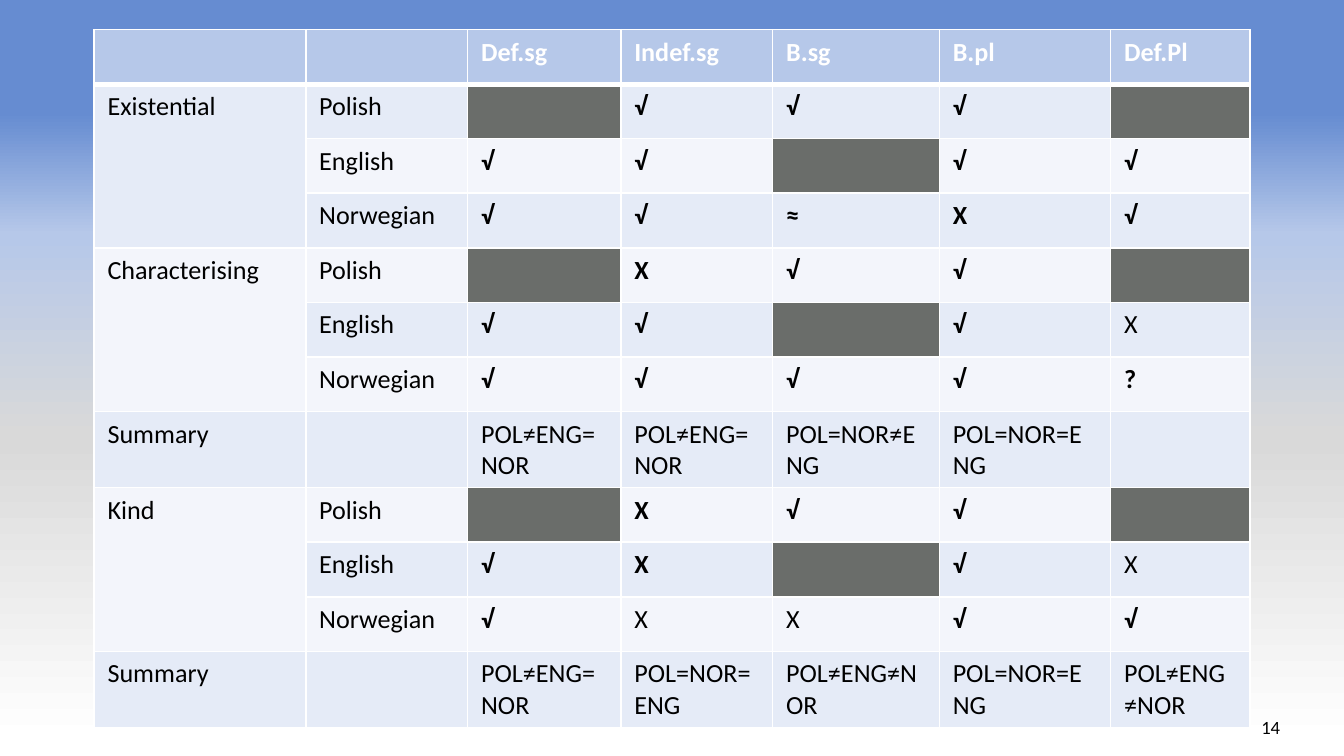
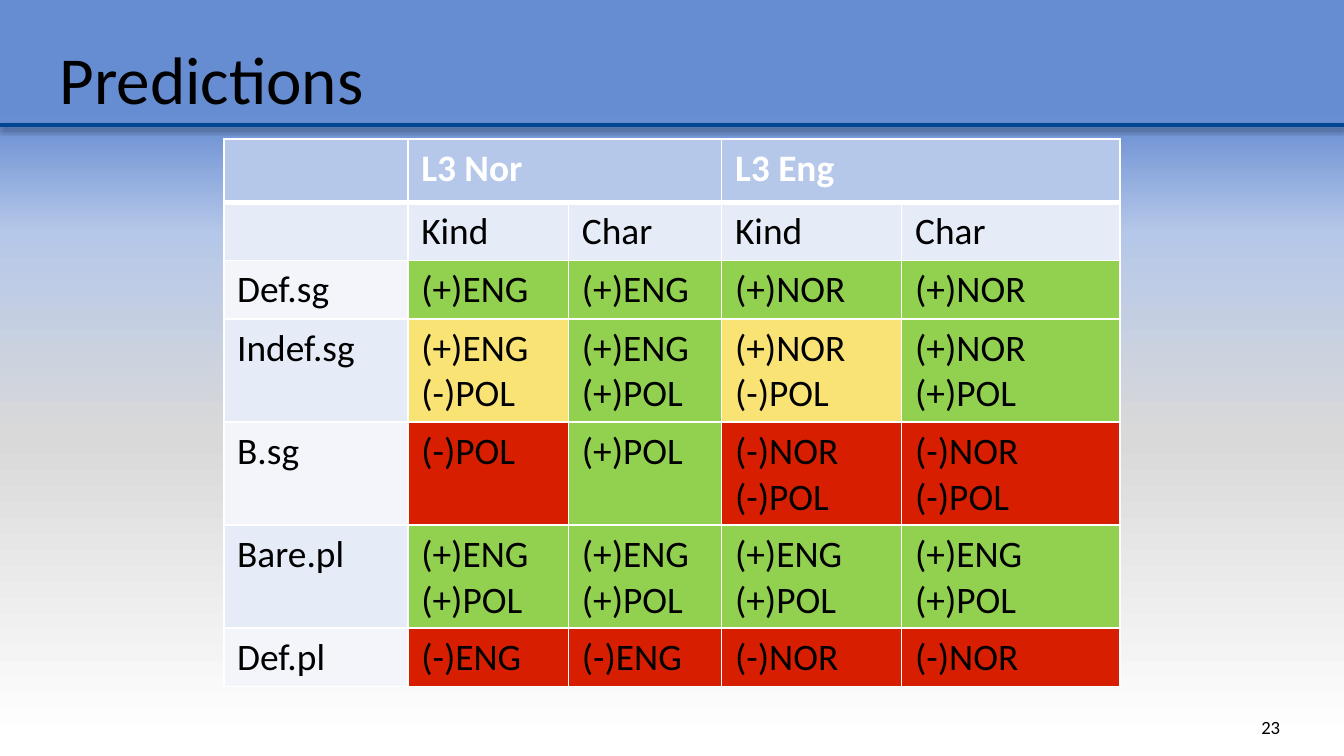
from copy import deepcopy

from lxml import etree
from pptx import Presentation
from pptx.dml.color import RGBColor
from pptx.enum.shapes import MSO_CONNECTOR
from pptx.enum.text import MSO_ANCHOR, PP_ALIGN
from pptx.oxml.ns import qn
from pptx.util import Inches, Pt

STRAIGHT = MSO_CONNECTOR.STRAIGHT
MIDDLE = MSO_ANCHOR.MIDDLE
LEFT, CENTER = PP_ALIGN.LEFT, PP_ALIGN.CENTER

COLORS = {
    "text": "000000", "white": "FFFFFF", "rule": "014693", "header": "B6C8E9",
    "band_odd": "E5EBF7", "band_even": "F3F5FB", "blocked": "6A6D6A",
    "help": "92D050", "mixed": "FAE375", "hinder": "D81E00",
}
BACKGROUND = [(0.02, "FFFFFF"), (0.42, "D9D9D9"), (0.69, "B6C8E9"), (0.85, "668CD1")]
FONT = "Calibri"
COLUMNS, ROWS = 100, 56.25
SLIDE_W = Inches(10)
SLIDE_H = SLIDE_W * 9 // 16
NUMBER_BOX = (92.7, 52.6, 3.7, 3)
TITLE_BOX = (3.45, 2.3, 90, 7)
READINGS_BOX = (7, 2.2, 86, 51.9)
PREDICTIONS_BOX = (16.65, 10.35, 66.7, 40.7)
LANGUAGES = ("Polish", "English", "Norwegian")
BLOCKED = "#"
ALWAYS_BOLD = "√≈?"

READINGS = [
    ("Existential", ["# √ √ √ #", "√ √ # √ √", "√ √ ≈ *X √"], None),
    ("Characterising", ["# *X √ √ #", "√ √ # √ X", "√ √ √ √ ?"],
     ["POL≠ENG=NOR", "POL≠ENG=NOR", "POL=NOR≠ENG", "POL=NOR=ENG", ""]),
    ("Kind", ["# *X √ √ #", "√ *X # √ X", "√ X X √ √"],
     ["POL≠ENG=NOR", "POL=NOR=ENG", "POL≠ENG≠NOR", "POL=NOR=ENG", "POL≠ENG≠NOR"]),
]
PREDICTIONS = [
    ["", "L3 Nor", "", "L3 Eng", ""],
    ["", "Kind", "Char", "Kind", "Char"],
    ["Def.sg", "(+)ENG", "(+)ENG", "(+)NOR", "(+)NOR"],
    ["Indef.sg", "(+)ENG\n(-)POL", "(+)ENG\n(+)POL", "(+)NOR\n(-)POL", "(+)NOR\n(+)POL"],
    ["B.sg", "(-)POL", "(+)POL", "(-)NOR\n(-)POL", "(-)NOR\n(-)POL"],
    ["Bare.pl"] + ["(+)ENG\n(+)POL"] * 4,
    ["Def.pl", "(-)ENG", "(-)ENG", "(-)NOR", "(-)NOR"],
]


def rgb(name):
    return RGBColor.from_string(COLORS[name])


def across(n):
    return round(SLIDE_W * n / COLUMNS)


def down(n):
    return round(SLIDE_H * n / ROWS)


def place(box):
    x, y, w, h = box
    return across(x), down(y), across(w), down(h)


def format_text(tf, size, color="text", bold=False, align=LEFT):
    formats = {"name": FONT, "size": Pt(size), "bold": bold}
    for p in tf.paragraphs:
        p.alignment = align
        for r in p.runs:
            for key, value in formats.items():
                setattr(r.font, key, value)
            r.font.color.rgb = rgb(color)


def add_text(s, box, text, size, align=LEFT):
    tf = s.shapes.add_textbox(*place(box)).text_frame
    tf.word_wrap = True
    tf.vertical_anchor = MIDDLE
    tf.text = text
    format_text(tf, size, align=align)


def add_base(prs, number):
    s = prs.slides.add_slide(prs.slide_layouts[6])
    fill = s.background.fill
    fill.gradient()
    fill.gradient_angle = 90
    stops = s.element.find(".//" + qn("a:gsLst"))
    while len(stops) < len(BACKGROUND):
        stops.append(deepcopy(stops[0]))
    for stop, (position, color) in zip(fill.gradient_stops, BACKGROUND):
        stop.position = position
        stop.color.rgb = RGBColor.from_string(color)
    add_text(s, NUMBER_BOX, str(number), 10, CENTER)
    return s


def add_title(s, box, text):
    add_text(s, box, text, 36)
    y = down(box[1] + box[3])
    line = s.shapes.add_connector(STRAIGHT, 0, y, SLIDE_W, y)
    line.line.color.rgb = rgb("rule")
    line.line.width = Pt(2)
    effects = etree.SubElement(line.element.spPr, qn("a:effectLst"))
    shadow = etree.SubElement(effects, qn("a:outerShdw"), blurRad=str(Pt(3.1)),
                              dist=str(Pt(1.6)), dir="5400000", rotWithShape="0")
    color = etree.SubElement(shadow, qn("a:srgbClr"), val=COLORS["text"])
    etree.SubElement(color, qn("a:alpha"), val="38000")


def add_borders(cell, row):
    widths = {"L": 1, "R": 1, "T": 3 if row == 1 else 1, "B": 3 if row == 0 else 1}
    tcPr = cell._tc.get_or_add_tcPr()
    for side, width in widths.items():
        ln = etree.SubElement(tcPr, qn("a:ln" + side), w=str(Pt(width)))
        solid = etree.SubElement(ln, qn("a:solidFill"))
        etree.SubElement(solid, qn("a:srgbClr"), val=COLORS["white"])


def add_grid(s, box, widths, heights, rows, size, merges, pick_fill):
    frame = s.shapes.add_table(len(rows), len(widths), *place(box))
    table = frame.table
    table.first_row = table.horz_banding = False
    for column, width in zip(table.columns, widths):
        column.width = across(width)
    for i, (values, height) in enumerate(zip(rows, heights)):
        table.rows[i].height = down(height)
        band = "header" if i == 0 else "band_odd" if i % 2 else "band_even"
        for j, value in enumerate(values):
            cell = table.cell(i, j)
            add_borders(cell, i)
            cell.fill.solid()
            cell.fill.fore_color.rgb = rgb(pick_fill(value) or band)
            text = value.lstrip("*" + BLOCKED)
            if text:
                cell.text_frame.text = text
                bold = i == 0 or value[0] == "*" or text in ALWAYS_BOLD
                format_text(cell.text_frame, size, "text" if i else "white", bold)
    for first, last in merges:
        table.cell(*first).merge(table.cell(*last))
    frame.width, frame.height = place(box)[2:]


def reading_fill(value):
    return "blocked" if value == BLOCKED else None


def prediction_fill(value):
    plus, minus = value.count("(+)"), value.count("(-)")
    if plus and minus:
        return "mixed"
    return "help" if plus else "hinder" if minus else None


def readings_slide(prs):
    s = add_base(prs, 14)
    rows = [["", "", "Def.sg", "Indef.sg", "B.sg", "B.pl", "Def.Pl"]]
    merges = []
    for reading, marks, summary in READINGS:
        top = len(rows)
        merges.append(((top, 0), (top + len(LANGUAGES) - 1, 0)))
        for k, language in enumerate(LANGUAGES):
            rows.append(["" if k else reading, language, *marks[k].split()])
        if summary:
            rows.append(["Summary", "", *summary])
    widths = [15.75, 12.05, 11.4, 11.3, 12.4, 12.75, 10.35]
    add_grid(s, READINGS_BOX, widths, [4.06] * len(rows), rows, 14, merges, reading_fill)


def predictions_slide(prs):
    s = add_base(prs, 23)
    add_title(s, TITLE_BOX, "Predictions")
    heights = [4.7] + [4.06] * (len(PREDICTIONS) - 1)
    merges = [((0, j), (0, j + 1)) for j in (1, 3)]
    add_grid(s, PREDICTIONS_BOX, [13.7, 11.95, 11.4, 13.4, 16.25], heights, PREDICTIONS,
             20, merges, prediction_fill)


def main():
    prs = Presentation()
    prs.slide_width, prs.slide_height = SLIDE_W, SLIDE_H
    readings_slide(prs)
    predictions_slide(prs)
    prs.save("out.pptx")


if __name__ == "__main__":
    main()
